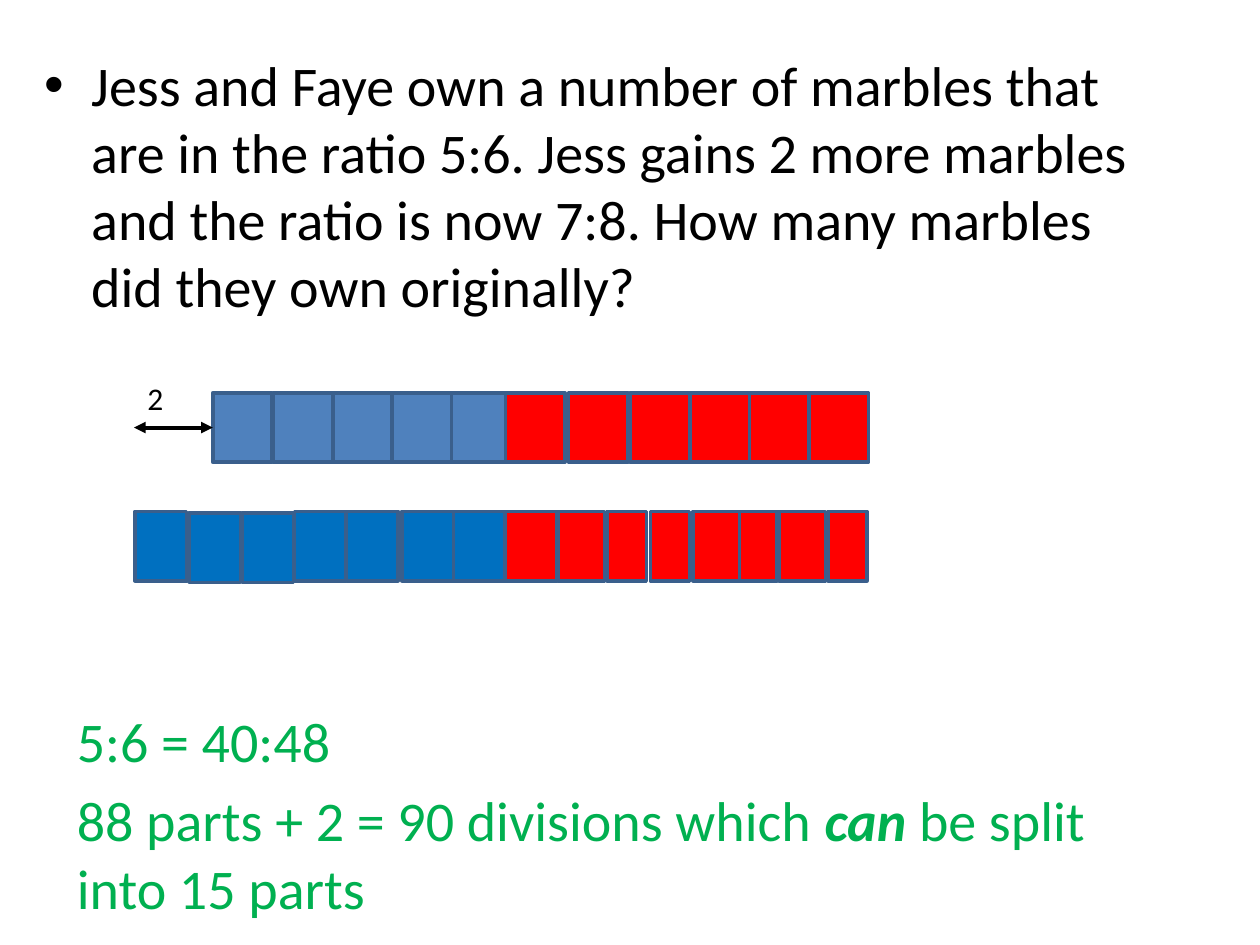
from lxml.etree import SubElement
from pptx import Presentation
from pptx.dml.color import RGBColor
from pptx.enum.shapes import MSO_CONNECTOR as CONN, MSO_SHAPE as SHAPE
from pptx.oxml.ns import qn
from pptx.util import Cm, Pt

BLACK = RGBColor(0x00, 0x00, 0x00)
GREEN = RGBColor(0x00, 0xB0, 0x50)
STEEL = RGBColor(0x4F, 0x81, 0xBD)
BLUE = RGBColor(0x00, 0x70, 0xC0)
RED = RGBColor(0xFF, 0x00, 0x00)
OUTLINE = RGBColor(0x3A, 0x5F, 0x8C)
FONT = "Calibri"

# Content: runs are (text, emphasised)
QUESTION = [("Jess and Faye own a number of marbles that are in the ratio 5:6. "
             "Jess gains 2 more marbles and the ratio is now 7:8. "
             "How many marbles did they own originally?", False)]
GAIN = [("2", False)]
RATIO = [("5:6 = 40:48", False)]
ANSWER = [("88 parts + 2 = 90 divisions which ", False), ("can", True),
          (" be split into 15 parts", False)]

# Bars in cm: (left, top, width) of each cell, from back to front
CELL_H = 1.4
BEFORE_TOP, AFTER_TOP = 7.92, 10.31
BEFORE_JESS = [(x, BEFORE_TOP, 1.2) for x in (4.29, 5.51, 6.71, 8.99, 7.9)]
BEFORE_FAYE = [(x, BEFORE_TOP, 1.2)
               for x in (10.19, 11.46, 12.7, 13.92, 15.11, 16.31)]
AFTER_FAYE = [(x, AFTER_TOP, w) for x, w in (
    (16.69, 0.79), (15.7, 0.94), (14.88, 0.79), (13.97, 0.94),
    (13.11, 0.79), (12.24, 0.79), (11.25, 0.94), (10.19, 1.04))]
AFTER_JESS = [(x, y, 1.04) for x, y in (
    (9.14, AFTER_TOP), (8.1, AFTER_TOP), (6.99, AFTER_TOP), (5.94, AFTER_TOP),
    (4.88, 10.34), (3.81, 10.34), (2.72, AFTER_TOP))]
BARS = [(BEFORE_JESS, STEEL), (BEFORE_FAYE, RED),
        (AFTER_FAYE, RED), (AFTER_JESS, BLUE)]


def add_text(s, box, runs, size, color):
    tf = s.shapes.add_textbox(*map(Cm, box)).text_frame
    tf.word_wrap = True
    p = tf.paragraphs[0]
    for text, strong in runs:
        r = p.add_run()
        r.text = text
        r.font.name, r.font.size = FONT, Pt(size)
        r.font.bold = r.font.italic = strong
        r.font.color.rgb = color
    return p


def add_bullet(p, indent):
    pPr = p._p.get_or_add_pPr()
    pPr.set("marL", str(Cm(indent)))
    pPr.set("indent", str(-Cm(indent)))
    SubElement(pPr, qn("a:buFont")).set("typeface", "Arial")
    SubElement(pPr, qn("a:buChar")).set("char", "•")


def add_cell(s, left, top, width, fill):
    sp = s.shapes.add_shape(SHAPE.RECTANGLE, Cm(left), Cm(top), Cm(width), Cm(CELL_H))
    sp.shadow.inherit = False
    sp.fill.solid()
    sp.fill.fore_color.rgb = fill
    sp.line.color.rgb = OUTLINE
    sp.line.width = Pt(2)
    return sp


def add_double_arrow(s, left, target):
    y = target.top + target.height // 2
    line = s.shapes.add_connector(CONN.STRAIGHT, Cm(left), y, target.left, y)
    line.end_connect(target, 1)
    line.line.color.rgb = BLACK
    line.line.width = Pt(2.25)
    ln = line.line._get_or_add_ln()
    for end in ("a:headEnd", "a:tailEnd"):
        SubElement(ln, qn(end)).set("type", "triangle")
    SubElement(line._element.spPr, qn("a:effectLst"))


def main():
    prs = Presentation()
    prs.slide_width, prs.slide_height = Cm(25.4), Cm(19.05)
    s = prs.slides.add_slide(prs.slide_layouts[6])

    # Question
    p = add_text(s, (0.64, 0.89, 22.86, 12.57), QUESTION, 32, BLACK)
    add_bullet(p, 0.95)

    # Ratio bars before and after the gain
    bars = [[add_cell(s, *cell, fill) for cell in cells] for cells, fill in BARS]

    # Gained marbles
    add_double_arrow(s, 2.7, bars[0][0])
    add_text(s, (2.72, 7.52, 1.57, 1.02), GAIN, 18, BLACK)

    # Working
    add_text(s, (1.3, 14.12, 11.81, 1.62), RATIO, 32, GREEN)
    add_text(s, (1.3, 15.72, 22.81, 3), ANSWER, 32, GREEN)

    prs.save("out.pptx")


if __name__ == "__main__":
    main()
